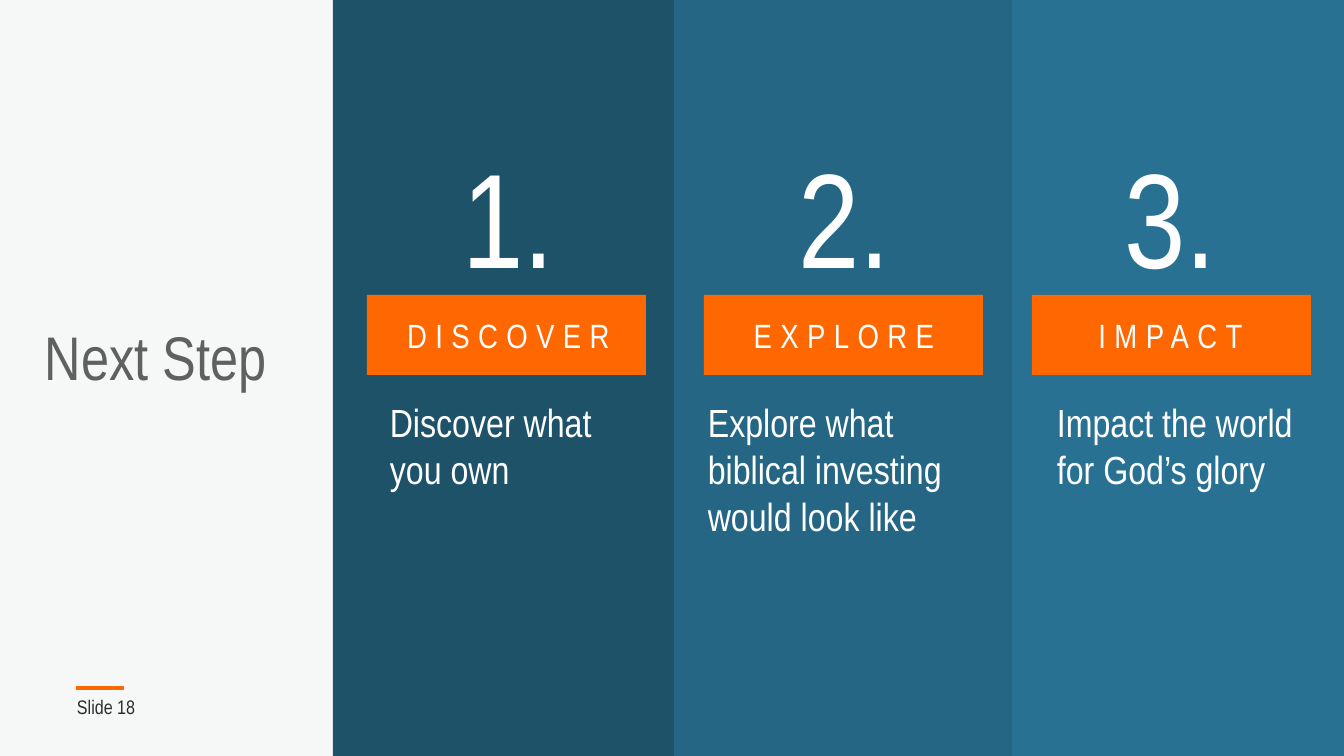
"""Build the Next Step slide with its three numbered columns."""
import pptx
import pptx.util
from pptx.dml.color import RGBColor
from pptx.enum.shapes import MSO_CONNECTOR, MSO_SHAPE
from pptx.enum.text import MSO_ANCHOR, PP_ALIGN
from lxml import etree

PX = 914400 / 100.8
WIDE, HIGH = 1344, 756
PALE = RGBColor(0xF6, 0xF8, 0xF8)
ORANGE = RGBColor(0xFF, 0x68, 0x00)
WHITE = RGBColor(0xFF, 0xFF, 0xFF)
GREY = RGBColor(0x60, 0x60, 0x60)
DARK = RGBColor(0x2B, 0x2B, 0x2B)
BLUES = [RGBColor(0x1E, 0x52, 0x69), RGBColor(0x24, 0x66, 0x84), RGBColor(0x28, 0x71, 0x93)]

deck = pptx.Presentation()
deck.slide_width = round(WIDE * PX)
deck.slide_height = round(HIGH * PX)
slide = deck.slides.add_slide(deck.slide_layouts[6])
slide.background.fill.solid()
slide.background.fill.fore_color.rgb = PALE


def block(area, color):
    rect = slide.shapes.add_shape(MSO_SHAPE.RECTANGLE, *[round(v * PX) for v in area])
    rect.shadow.inherit = False
    rect.fill.solid()
    rect.fill.fore_color.rgb = color
    rect.line.fill.background()


def write(text, area, size, color=WHITE, align=PP_ALIGN.LEFT, space=None, track=None):
    box = slide.shapes.add_textbox(*[round(v * PX) for v in area])
    frame = box.text_frame
    frame.word_wrap = True
    para = frame.paragraphs[0]
    para.alignment = align
    para.line_spacing = space
    run = para.add_run()
    run.text = text
    run.font.name = "Arial Narrow"
    run.font.size = pptx.util.Pt(size)
    run.font.color.rgb = color
    if track:
        run.font._element.set("spc", str(track * 100))
    return frame


steps = [
    ("DISCOVER", "Discover what you own", 333, 367, (380, 257), (380, 264)),
    ("EXPLORE", "Explore what biblical investing would look like", 674, 704, (705, 278), (698, 282)),
    ("IMPACT", "Impact the world for God’s glory", 1012, 1032, (1045, 251), (1047, 264)),
]
edges = [step[2] for step in steps] + [WIDE]
for num, (label, note, left, bar, head, body) in enumerate(steps, 1):
    block((left, 0, edges[num] - left, HIGH), BLUES[num - 1])
    block((bar, 295, 279, 80), ORANGE)
    for text, top, high, size, track in [(f"{num}.", 147, 140, 96, None), (label, 315, 50, 24, 6)]:
        write(text, (head[0], top, head[1], high), size,
              align=PP_ALIGN.CENTER, space=0.9, track=track)
    write(note, (body[0], 393, body[1], 152), 28)

write("Next Step", (15, 314, 282, 183), 44, color=GREY, align=PP_ALIGN.CENTER)

rule = slide.shapes.add_connector(
    MSO_CONNECTOR.STRAIGHT, *[round(v * PX) for v in (76, 688, 124, 688)])
rule.line.color.rgb = ORANGE
rule.line.width = pptx.util.Pt(3)
etree.SubElement(rule._element.spPr, pptx.oxml.ns.qn("a:effectLst"))

foot = write("Slide 18", (64, 689, 100, 36), 14, color=DARK)
foot.vertical_anchor = MSO_ANCHOR.MIDDLE
foot.margin_left = foot.margin_right = round(13 * PX)
foot.margin_top = foot.margin_bottom = round(7 * PX)

deck.save("out.pptx")
